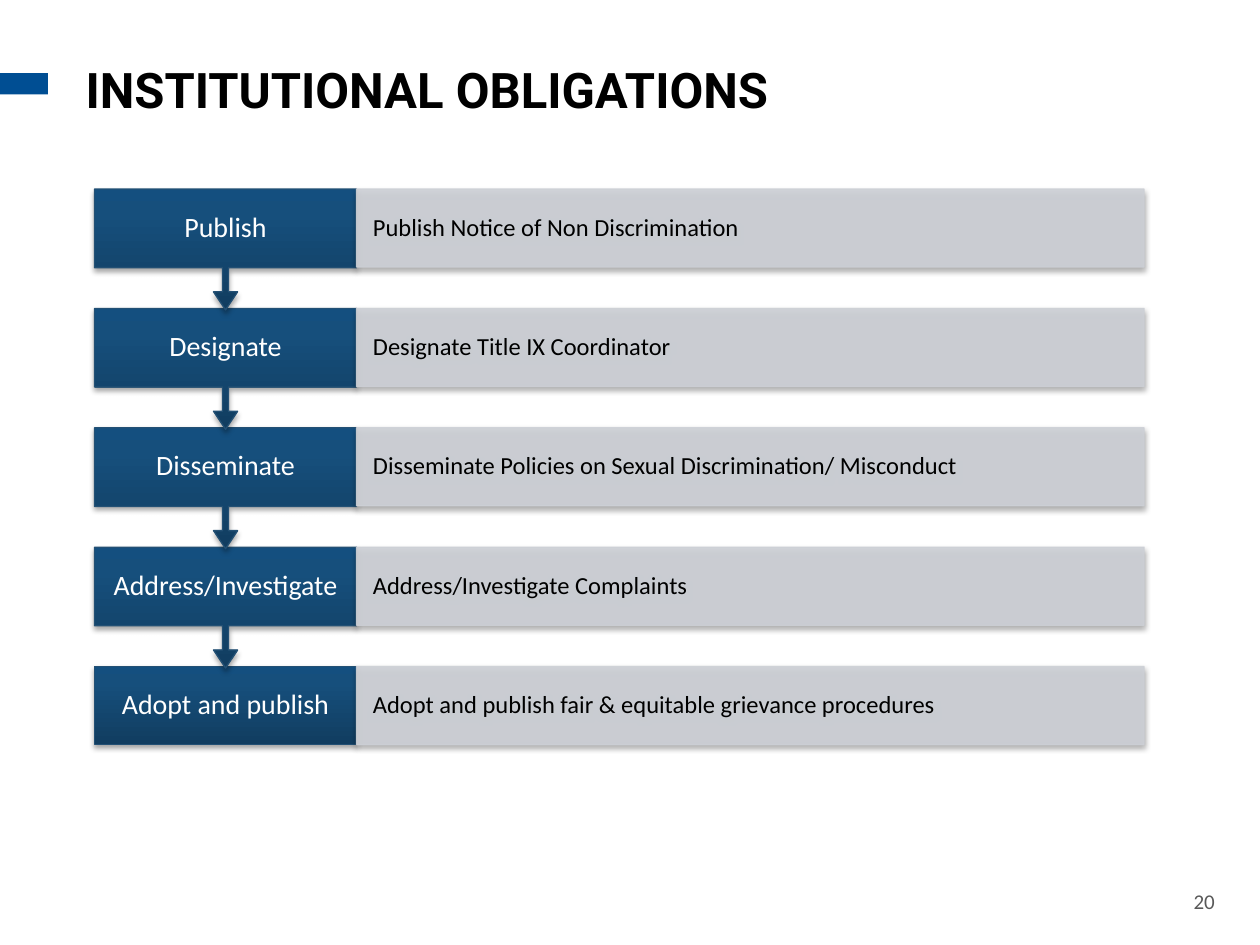
from lxml.etree import SubElement
from pptx import Presentation
from pptx.dml.color import RGBColor
from pptx.enum.shapes import MSO_SHAPE
from pptx.enum.text import MSO_ANCHOR, PP_ALIGN
from pptx.oxml import parse_xml
from pptx.oxml.ns import nsdecls, qn
from pptx.util import Inches, Pt

COLORS = {
    "accent": "004E93",
    "step_line": "235074",
    "step_dark": "113D60",
    "step_mid": "164F7C",
    "step_light": "144F7F",
    "detail": "CDD0D6",
    "number": "595959",
    "white": "FFFFFF",
    "black": "000000",
}

# Step label and its description, from top to bottom
STEPS = [
    ("Publish", "Publish Notice of Non Discrimination"),
    ("Designate", "Designate Title IX Coordinator"),
    ("Disseminate", "Disseminate Policies on Sexual Discrimination/ Misconduct"),
    ("Address/Investigate", "Address/Investigate Complaints"),
    ("Adopt and publish", "Adopt and publish fair & equitable grievance procedures"),
]
FIRST_TOP, LAST_TOP = 1.5, 5.29
ROW_PITCH = (LAST_TOP - FIRST_TOP) / (len(STEPS) - 1)
BOX_HEIGHT, CALLOUT_HEIGHT = 0.62, 0.96
LABEL_LEFT, LABEL_WIDTH, DETAIL_WIDTH = 0.75, 2.08, 6.25


def rgb(name):
    return RGBColor.from_string(COLORS[name])


class SlideBuilder:
    """Holds the slide and draws each kind of element on it."""

    def __init__(self, slide):
        self.slide = slide

    def set_text(self, shape, text, size, color, font="Calibri", align=PP_ALIGN.LEFT,
                 anchor=MSO_ANCHOR.MIDDLE, margins=(0.1, 0.05), bold=False, spacing=None):
        frame = shape.text_frame
        frame.word_wrap = True
        frame.vertical_anchor = anchor
        frame.margin_left = frame.margin_right = Inches(margins[0])
        frame.margin_top = frame.margin_bottom = Inches(margins[1])
        paragraph = frame.paragraphs[0]
        paragraph.text = text
        paragraph.alignment = align
        paragraph.line_spacing = spacing
        paragraph.space_before = Pt(0)
        paragraph.font.name = font
        paragraph.font.size = Pt(size)
        paragraph.font.bold = bold
        paragraph.font.color.rgb = rgb(color)

    def title(self, text, left, top, width, height):
        title = self.slide.shapes.title
        title.left, title.top = Inches(left), Inches(top)
        title.width, title.height = Inches(width), Inches(height)
        self.set_text(title, text, 28, "black", font="Roboto", anchor=MSO_ANCHOR.TOP, bold=True)

    def text_box(self, text, left, top, width, height, **style):
        box = self.slide.shapes.add_textbox(
            Inches(left), Inches(top), Inches(width), Inches(height))
        self.set_text(box, text, **style)

    def shape(self, kind, left, top, width, height, fill, line=None):
        shape = self.slide.shapes.add_shape(
            kind, Inches(left), Inches(top), Inches(width), Inches(height))
        shape.fill.solid()
        shape.fill.fore_color.rgb = rgb(fill)
        if line:
            shape.line.color.rgb = rgb(line)
            shape.line.width = Pt(0.75)
        else:
            shape.line.fill.background()
        shape.shadow.inherit = False
        return shape

    def add_shadow(self, shape):
        effects = shape._element.spPr.find(qn("a:effectLst"))
        effects.append(parse_xml(
            f'<a:outerShdw {nsdecls("a")} blurRad="{Pt(3.1)}" dist="{Pt(1.8)}" '
            f'dir="5400000" rotWithShape="0"><a:srgbClr val="{COLORS["black"]}">'
            '<a:alpha val="35000"/></a:srgbClr></a:outerShdw>'))

    def add_step_gradient(self, shape):
        """Shade from dark at the bottom to light at the top, whatever the rotation."""
        stops = "".join(
            f'<a:gs pos="{percent * 1000}"><a:srgbClr val="{COLORS[name]}"/></a:gs>'
            for percent, name in ((0, "step_dark"), (80, "step_mid"), (100, "step_light")))
        properties = shape._element.spPr
        properties.replace(properties.find(qn("a:solidFill")), parse_xml(
            f'<a:gradFill {nsdecls("a")} rotWithShape="0"><a:gsLst>{stops}</a:gsLst>'
            '<a:lin ang="16200000" scaled="0"/></a:gradFill>'))

    def step_label(self, text, top, has_arrow):
        kind = MSO_SHAPE.UP_ARROW_CALLOUT if has_arrow else MSO_SHAPE.RECTANGLE
        height = CALLOUT_HEIGHT if has_arrow else BOX_HEIGHT
        shape = self.shape(kind, LABEL_LEFT, top, LABEL_WIDTH, height,
                           "step_mid", "step_line")
        if has_arrow:
            shape.rotation = 180
            for index, value in enumerate((0.05, 0.1, 0.15, 0.65)):
                shape.adjustments[index] = value
        self.add_step_gradient(shape)
        self.add_shadow(shape)
        self.text_box(text, LABEL_LEFT, top, LABEL_WIDTH, BOX_HEIGHT, size=16,
                      color="white", align=PP_ALIGN.CENTER, margins=(0.15, 0.12), spacing=0.9)

    def step_detail(self, text, top):
        shape = self.shape(MSO_SHAPE.RECTANGLE, LABEL_LEFT + LABEL_WIDTH, top,
                           DETAIL_WIDTH, BOX_HEIGHT, "detail", "detail")
        for color in shape._element.spPr.iter(qn("a:srgbClr")):
            SubElement(color, qn("a:alpha")).set("val", "90000")
        self.add_shadow(shape)
        self.set_text(shape, text, 14, "black", margins=(0.13, 0.19), spacing=0.9)


def main():
    presentation = Presentation()
    presentation.slide_width, presentation.slide_height = Inches(10), Inches(7.5)
    builder = SlideBuilder(presentation.slides.add_slide(presentation.slide_layouts[5]))

    builder.shape(MSO_SHAPE.RECTANGLE, -0.01, 0.58, 0.39, 0.17, "accent")
    builder.text_box("20", 9.26, 7, 0.48, 0.3, size=12, color="number",
                     align=PP_ALIGN.RIGHT, anchor=MSO_ANCHOR.TOP)
    builder.title("INSTITUTIONAL OBLIGATIONS", 0.58, 0.42, 6.75, 0.92)

    # Bottom row first, so that each arrow lies over the row below it
    last = len(STEPS) - 1
    for row, (label, detail) in reversed(list(enumerate(STEPS))):
        top = FIRST_TOP + row * ROW_PITCH
        builder.step_label(label, top, has_arrow=row < last)
        builder.step_detail(detail, top)

    presentation.save("out.pptx")


if __name__ == "__main__":
    main()
